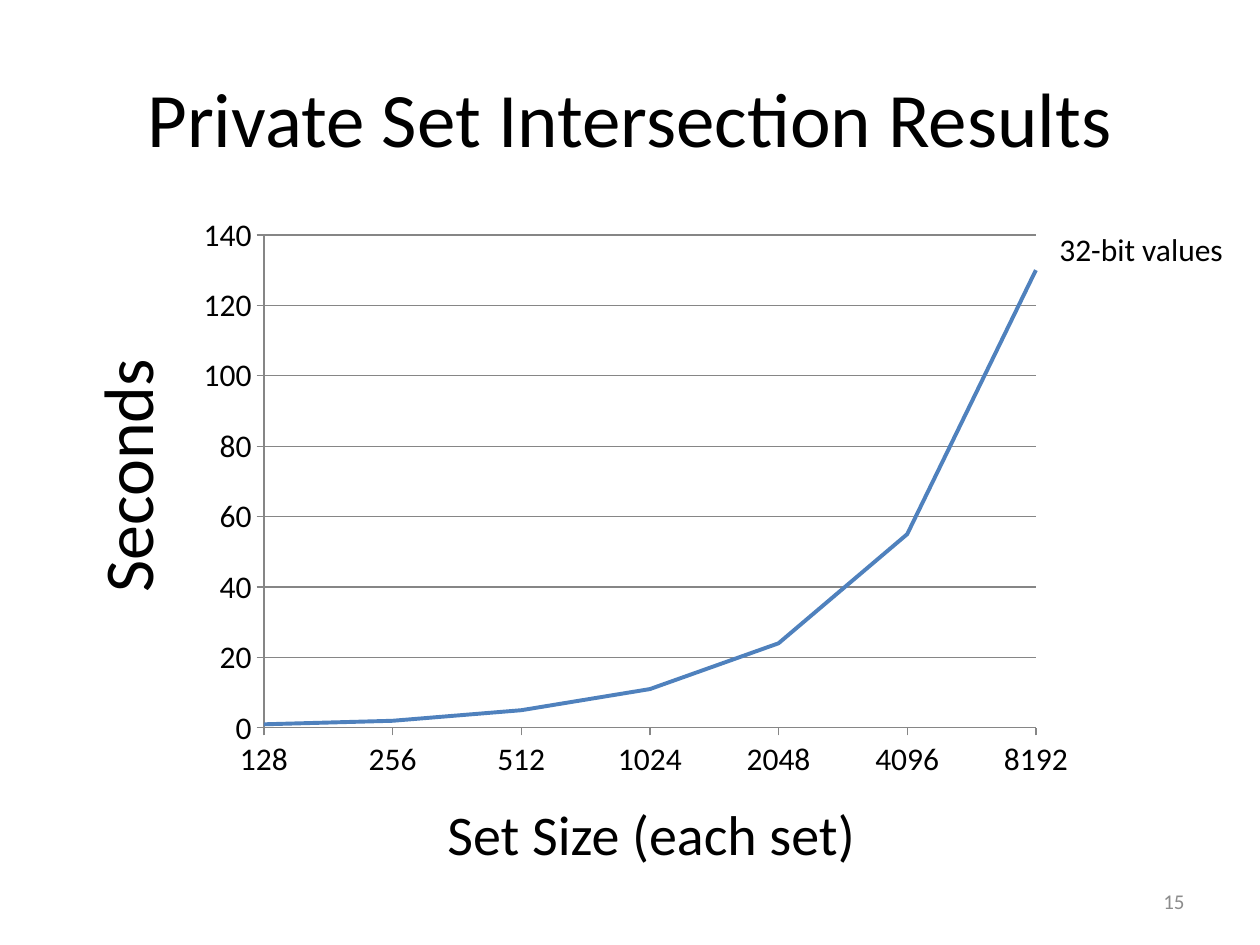
import lxml.etree
import pptx
import pptx.chart.data
import pptx.dml.color
import pptx.enum.chart
import pptx.enum.text
import pptx.oxml.ns
import pptx.util

BLACK = pptx.dml.color.RGBColor(0x00, 0x00, 0x00)
GRAY = pptx.dml.color.RGBColor(0x8C, 0x8C, 0x8C)
AXIS_GRAY = pptx.dml.color.RGBColor(0x86, 0x86, 0x86)
BLUE = pptx.dml.color.RGBColor(0x4F, 0x81, 0xBD)
FONT = "Calibri"
PX = 914400 // 126
ALIGN = pptx.enum.text.PP_ALIGN
ANCHOR = pptx.enum.text.MSO_ANCHOR

SET_SIZES = ["128", "256", "512", "1024", "2048", "4096", "8192"]
SECONDS = [1, 2, 5, 11, 24, 55, 130]
CHART_BOX = (186, 204, 900, 586)
PLOT_BOX = (264, 235, 772, 493)

TEXTS = [
    ("Private Set Intersection Results", (63, 38, 1134, 157),
     dict(size=44, align=ALIGN.CENTER, anchor=ANCHOR.MIDDLE, wrap=True)),
    ("15", (903, 876, 294, 50),
     dict(size=12, color=GRAY, align=ALIGN.RIGHT, anchor=ANCHOR.MIDDLE, wrap=True)),
    ("Seconds", (-5, 426, 261, 97), dict(size=40, rotation=270)),
    ("Set Size (each set)", (435, 793, 437, 81), dict(size=32)),
    ("32-bit values", (1047, 224, 190, 50), dict(size=18)),
]


def scaled(box):
    return [pptx.util.Emu(length * PX) for length in box]


def add_text(slide, text, box, size, color=BLACK, align=ALIGN.LEFT,
             anchor=ANCHOR.TOP, wrap=False, rotation=0):
    shape = slide.shapes.add_textbox(*scaled(box))
    shape.rotation = rotation
    frame = shape.text_frame
    frame.word_wrap = wrap
    frame.vertical_anchor = anchor
    if not wrap:
        frame.auto_size = pptx.enum.text.MSO_AUTO_SIZE.SHAPE_TO_FIT_TEXT
    paragraph = frame.paragraphs[0]
    paragraph.alignment = align
    run = paragraph.add_run()
    run.text = text
    run.font.name = FONT
    run.font.size = pptx.util.Pt(size)
    run.font.color.rgb = color


def chart_element(name, value=None):
    element = lxml.etree.Element(pptx.oxml.ns.qn("c:" + name))
    if value is not None:
        element.set("val", str(value))
    return element


def remove_children(parent, name):
    for child in parent.findall(pptx.oxml.ns.qn("c:" + name)):
        parent.remove(child)


def place_plot(chart):
    left, top, width, height = CHART_BOX
    plot_left, plot_top, plot_width, plot_height = PLOT_BOX
    settings = [
        ("layoutTarget", "inner"), ("xMode", "edge"), ("yMode", "edge"),
        ("x", (plot_left - left) / width), ("y", (plot_top - top) / height),
        ("w", plot_width / width), ("h", plot_height / height),
    ]
    layout = chart_element("layout")
    manual = chart_element("manualLayout")
    layout.append(manual)
    for name, value in settings:
        manual.append(chart_element(name, value))
    plot_area = chart._chartSpace.chart.plotArea
    remove_children(plot_area, "layout")
    plot_area.insert(0, layout)


def start_line_on_axis(chart):
    axis = chart.value_axis._element
    remove_children(axis, "crossBetween")
    crosses = axis.find(pptx.oxml.ns.qn("c:crosses"))
    crosses.addnext(chart_element("crossBetween", "midCat"))


def format_line(line, color, width):
    line.color.rgb = color
    line.width = pptx.util.Pt(width)


def add_chart(slide):
    data = pptx.chart.data.CategoryChartData()
    data.categories = SET_SIZES
    data.add_series("Series 1", SECONDS)
    chart = slide.shapes.add_chart(
        pptx.enum.chart.XL_CHART_TYPE.LINE, *scaled(CHART_BOX), data).chart
    chart.has_legend = False
    chart.has_title = False
    chart.font.name = FONT
    chart.font.size = pptx.util.Pt(10)
    chart.font.color.rgb = BLACK
    for axis in (chart.category_axis, chart.value_axis):
        axis.major_tick_mark = pptx.enum.chart.XL_TICK_MARK.OUTSIDE
        axis.minor_tick_mark = pptx.enum.chart.XL_TICK_MARK.NONE
        axis.tick_labels.font.size = pptx.util.Pt(18)
        axis.tick_labels.font.name = FONT
        axis.tick_labels.font.color.rgb = BLACK
        format_line(axis.format.line, AXIS_GRAY, 0.75)
    values = chart.value_axis
    values.minimum_scale, values.maximum_scale, values.major_unit = 0, 140, 20
    values.has_major_gridlines = True
    format_line(values.major_gridlines.format.line, AXIS_GRAY, 0.75)
    plot = chart.plots[0]
    plot.vary_by_categories = False
    series = plot.series[0]
    series.smooth = False
    series.marker.style = pptx.enum.chart.XL_MARKER_STYLE.NONE
    format_line(series.format.line, BLUE, 2.25)
    place_plot(chart)
    start_line_on_axis(chart)


def main():
    presentation = pptx.Presentation()
    presentation.slide_width = pptx.util.Inches(10)
    presentation.slide_height = pptx.util.Inches(7.5)
    slide = presentation.slides.add_slide(presentation.slide_layouts[6])
    add_chart(slide)
    for text, box, text_format in TEXTS:
        add_text(slide, text, box, **text_format)
    presentation.save("out.pptx")


if __name__ == "__main__":
    main()
